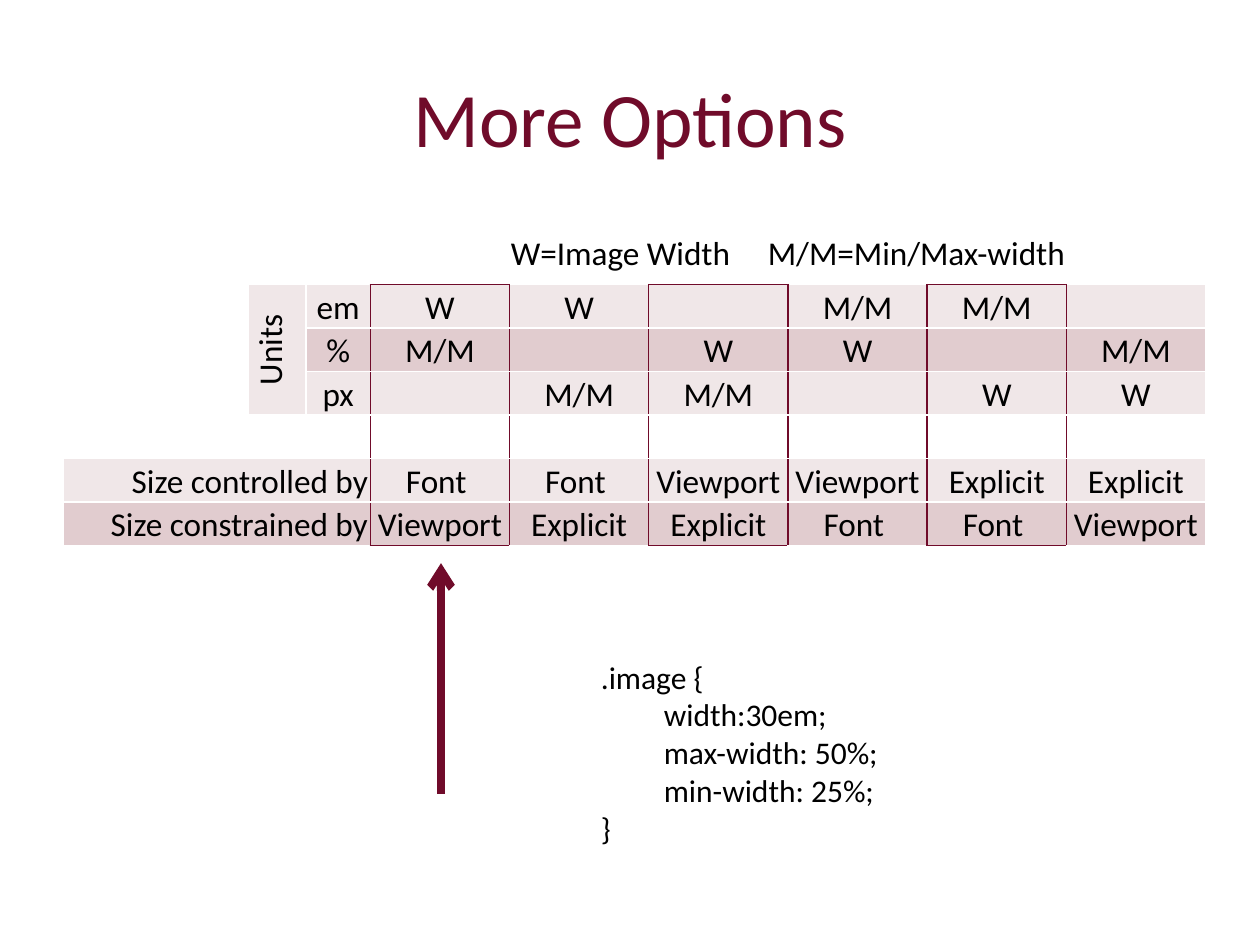
from lxml import etree
from pptx import Presentation
from pptx.dml.color import RGBColor
from pptx.enum.shapes import MSO_CONNECTOR
from pptx.enum.text import MSO_ANCHOR, MSO_AUTO_SIZE, PP_ALIGN
from pptx.oxml import parse_xml
from pptx.oxml.ns import nsdecls, qn
from pptx.util import Inches, Pt

LEFT, CENTER, RIGHT = PP_ALIGN.LEFT, PP_ALIGN.CENTER, PP_ALIGN.RIGHT
MIDDLE, BOTTOM = MSO_ANCHOR.MIDDLE, MSO_ANCHOR.BOTTOM
STRAIGHT = MSO_CONNECTOR.STRAIGHT
FIT_SHAPE = MSO_AUTO_SIZE.SHAPE_TO_FIT_TEXT

ACCENT, WHITE, BLACK = "700B2A", "FFFFFF", "000000"
LIGHT, DARK = "F0E7E8", "E1CCCF"
GRID_COLUMNS, GRID_ROWS = 20, 15

LEGEND = "W=Image Width\tM/M=Min/Max-width"
OPTIONS = [
    ["", "", "", LEGEND, "", "", "", "", ""],
    ["", "Units", "em", "W", "W", "", "M/M", "M/M", ""],
    ["", "", "%", "M/M", "", "W", "W", "", "M/M"],
    ["", "", "px", "", "M/M", "M/M", "", "W", "W"],
    [""] * 9,
    ["Size controlled by", "", "", "Font ", "Font ", "Viewport",
     "Viewport", "Explicit", "Explicit"],
    ["Size constrained by", "", "", "Viewport", "Explicit", "Explicit",
     "Font ", "Font ", "Viewport"],
]
COLUMN_WIDTHS = [2.94, 0.92, 1.02] + [2.21] * 6
ROW_HEIGHTS = [1.02] + [0.69] * 6
MERGES = [(0, 3, 0, 8), (1, 1, 3, 1), (5, 0, 5, 2), (6, 0, 6, 2)]
ROW_FILLS = [None, LIGHT, DARK, LIGHT, None, LIGHT, DARK]
FIRST_OPTION, LAST_ROW = 3, 6
CODE = [(".image {", 0), ("width:30em;", 1), ("max-width: 50%;", 1),
        ("min-width: 25%;", 1), ("}", 0)]


def rgb(value):
    return RGBColor.from_string(value)


def cell_fill(row, column):
    """Leave the area to the left of the units column empty."""
    return None if column == 0 and row < 5 else ROW_FILLS[row]


def edge_colors(row, column):
    """Rule off every option, and close the box of every second one."""
    inside = row > 0
    boxed = column >= FIRST_OPTION and (column - FIRST_OPTION) % 2 == 0
    accented = {
        "lnL": inside and column >= FIRST_OPTION,
        "lnR": inside and FIRST_OPTION - 1 <= column < 8,
        "lnT": row == 1 and boxed,
        "lnB": boxed and row in (0, LAST_ROW),
    }
    return {edge: ACCENT if on else WHITE for edge, on in accented.items()}


class SlideBuilder:
    """Holds the style and the current slide; lengths are grid units."""

    def __init__(self, deck, font_name):
        self.font_name = font_name
        self.unit_x = deck.slide_width / GRID_COLUMNS
        self.unit_y = deck.slide_height / GRID_ROWS
        self.slide = deck.slides.add_slide(deck.slide_layouts[5])

    def x(self, columns):
        return round(columns * self.unit_x)

    def y(self, rows):
        return round(rows * self.unit_y)

    def frame(self, left, top, width, height):
        return self.x(left), self.y(top), self.x(width), self.y(height)

    def add_span(self, para, text, size, color=BLACK, align=LEFT):
        para.alignment = align
        span = para.add_run()
        span.text = text
        span.font.color.rgb = rgb(color)
        for name, value in {"name": self.font_name, "size": Pt(size)}.items():
            setattr(span.font, name, value)

    def title(self, text, *frame):
        shape = self.slide.shapes.title
        names = ("left", "top", "width", "height")
        for name, value in zip(names, self.frame(*frame)):
            setattr(shape, name, value)
        shape.text_frame.vertical_anchor = MIDDLE
        self.add_span(shape.text_frame.paragraphs[0], text, 44, ACCENT, CENTER)

    def table(self, rows, *frame):
        shape = self.slide.shapes.add_table(
            len(rows), len(rows[0]), *self.frame(*frame))
        table = shape.table
        table.first_row = table.horz_banding = False
        for column, width in zip(table.columns, COLUMN_WIDTHS):
            column.width = self.x(width)
        for row, height in zip(table.rows, ROW_HEIGHTS):
            row.height = self.y(height)
        for top, left, bottom, right in MERGES:
            table.cell(top, left).merge(table.cell(bottom, right))
        for r, row in enumerate(rows):
            for c, text in enumerate(row):
                self.cell(table.cell(r, c), text, cell_fill(r, c),
                          edge_colors(r, c), RIGHT if c == 0 else CENTER)
        return table

    def cell(self, cell, text, fill, edges, align):
        layout = {"margin_left": Inches(0.02), "margin_right": Inches(0.02),
                  "margin_top": Inches(0.02), "margin_bottom": 0,
                  "vertical_anchor": BOTTOM}
        for name, value in layout.items():
            setattr(cell, name, value)
        if fill:
            cell.fill.solid()
            cell.fill.fore_color.rgb = rgb(fill)
        else:
            cell.fill.background()
        properties = cell._tc.get_or_add_tcPr()
        for index, (edge, color) in enumerate(edges.items()):
            properties.insert(index, parse_xml(
                f'<a:{edge} {nsdecls("a")} w="{Pt(1)}"><a:solidFill>'
                f'<a:srgbClr val="{color}"/></a:solidFill></a:{edge}>'))
        if text:
            self.add_span(cell.text_frame.paragraphs[0], text, 19, align=align)

    def legend(self, cell, indent, tab):
        """Place the two legend entries with a cell margin and a tab stop."""
        cell.vertical_anchor = MIDDLE
        cell.margin_left = self.x(indent)
        para = cell.text_frame.paragraphs[0]
        para.alignment = LEFT
        stops = etree.SubElement(para._p.get_or_add_pPr(), qn("a:tabLst"))
        etree.SubElement(stops, qn("a:tab"), pos=str(self.x(tab)), algn="l")

    def upright(self, cell):
        """Turn the cell's text to read from bottom to top."""
        cell.vertical_anchor = MIDDLE
        cell._tc.get_or_add_tcPr().set("vert", "vert270")

    def arrow(self, left, start, end):
        line = self.slide.shapes.add_connector(
            STRAIGHT, self.x(left), self.y(start), self.x(left), self.y(end))
        line.line.color.rgb = rgb(ACCENT)
        line.line.width = Pt(4.5)
        etree.SubElement(line.line._get_or_add_ln(), qn("a:tailEnd"),
                         type="arrow")
        etree.SubElement(line._element.spPr, qn("a:effectLst"))

    def code(self, lines, *frame):
        box = self.slide.shapes.add_textbox(*self.frame(*frame)).text_frame
        box.word_wrap = True
        box.auto_size = FIT_SHAPE
        for index, (text, level) in enumerate(lines):
            para = box.add_paragraph() if index else box.paragraphs[0]
            para.level = level
            self.add_span(para, text, 18)


def main():
    deck = Presentation()
    deck.slide_width, deck.slide_height = Inches(10), Inches(7.5)
    page = SlideBuilder(deck, "Calibri")
    page.title("More Options", 1, 0.6, 18, 2.5)
    options = page.table(OPTIONS, 1, 3.5, 18.14, 5.16)
    page.legend(options.cell(0, 3), 2.23, 4.08)
    page.upright(options.cell(1, 1))
    page.arrow(7, 12.6, 8.94)
    page.code(CODE, 9.34, 10.34, 8.5, 3.24)
    deck.save("out.pptx")


if __name__ == "__main__":
    main()
